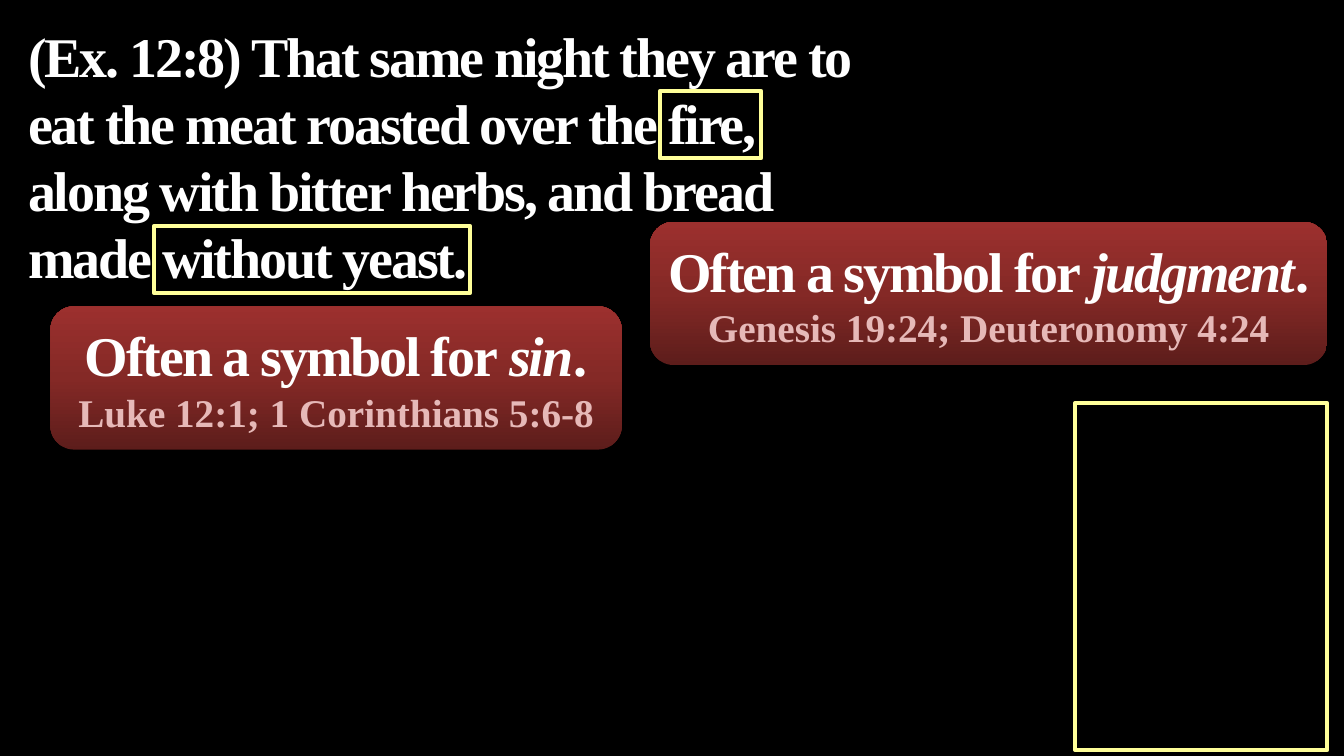
from copy import deepcopy

from pptx import Presentation
from pptx import util as u
from pptx.dml.color import RGBColor
from pptx.enum import shapes, text
from pptx.oxml.ns import qn

FONT = "Times New Roman"
WHITE, PINK, YELLOW, BLACK = "FFFFFF", "E6B9B8", "FFFF99", "000000"
CARD_STOPS = [(0, "5D1D1B"), (0.5, "842926"), (1, "9C302E")]


def color(hex_code):
    """Turn a hex string into a colour."""
    return RGBColor.from_string(hex_code)


def lengths(box):
    """Turn left, top, width and height in centimetres into lengths."""
    return [u.Cm(value) for value in box]


def format_paragraph(paragraph, size, hex_code, tracking=0):
    """Give a paragraph and its runs the bold serif style."""
    paragraph.line_spacing = u.Pt(size * 1.2)
    for run in paragraph.runs:
        run.font.name = FONT
        run.font.size = u.Pt(size)
        run.font.bold = True
        run.font.color.rgb = color(hex_code)
        run.font._element.set("spc", str(tracking))


def add_verse(slide, box, verse):
    """Place the wrapped Bible verse in the box."""
    shape = slide.shapes.add_textbox(*lengths(box))
    shape.text_frame.word_wrap = True
    shape.text_frame.text = verse
    format_paragraph(shape.text_frame.paragraphs[0], 40, WHITE, -150)


def add_frame(slide, box):
    """Draw a hollow yellow frame along the box."""
    shape = slide.shapes.add_shape(shapes.MSO_SHAPE.RECTANGLE, *lengths(box))
    shape.shadow.inherit = False
    shape.fill.background()
    shape.line.color.rgb = color(YELLOW)
    shape.line.width = u.Pt(3)


def fill_gradient(shape):
    """Fill a card with the three red stops, darkest at the bottom."""
    shape.fill.gradient()
    shape.fill.gradient_angle = 90
    stop_list = next(shape._element.iter(qn("a:gsLst")))
    stop_list.append(deepcopy(stop_list[-1]))
    for stop, (position, hex_code) in zip(shape.fill.gradient_stops, CARD_STOPS):
        stop.position = position
        stop.color.rgb = color(hex_code)


def add_card(slide, box, meaning, references):
    """Place a rounded card with a symbol's meaning and its references."""
    shape = slide.shapes.add_shape(shapes.MSO_SHAPE.ROUNDED_RECTANGLE, *lengths(box))
    shape.shadow.inherit = False
    shape.line.fill.background()
    fill_gradient(shape)

    frame = shape.text_frame
    frame.word_wrap = True
    frame.vertical_anchor = text.MSO_ANCHOR.MIDDLE
    headline, citation = frame.paragraphs[0], frame.add_paragraph()
    for part in ("Often a symbol for ", meaning, "."):
        run = headline.add_run()
        run.text = part
        run.font.italic = part == meaning
    citation.text = references
    for paragraph in (headline, citation):
        paragraph.alignment = text.PP_ALIGN.CENTER
    format_paragraph(headline, 40, WHITE, -150)
    format_paragraph(citation, 28, PINK)


def build_slide(presentation):
    """Build the slide on the symbols of the Passover meal."""
    slide = presentation.slides.add_slide(presentation.slide_layouts[6])
    slide.background.fill.solid()
    slide.background.fill.fore_color.rgb = color(BLACK)

    add_verse(
        slide,
        (0.46, 0.41, 21.41, 7.09),
        "(Ex. 12:8) That same night they are to eat the meat roasted over the fire, "
        "along with bitter herbs, and bread made without yeast.",
    )
    for box in ((16.64, 2.29, 2.54, 1.7), (3.89, 5.69, 7.95, 1.7)):
        add_frame(slide, box)
    add_card(slide, (16.38, 5.59, 17.07, 3.61), "judgment", "Genesis 19:24; Deuteronomy 4:24")
    add_card(slide, (1.27, 7.72, 14.4, 3.61), "sin", "Luke 12:1; 1 Corinthians 5:6-8")
    add_frame(slide, (27.1, 10.16, 6.35, 8.74))


def main():
    """Create and save the presentation."""
    presentation = Presentation()
    presentation.slide_width = u.Cm(33.87)
    presentation.slide_height = u.Cm(19.05)
    build_slide(presentation)
    presentation.save("out.pptx")


if __name__ == "__main__":
    main()
